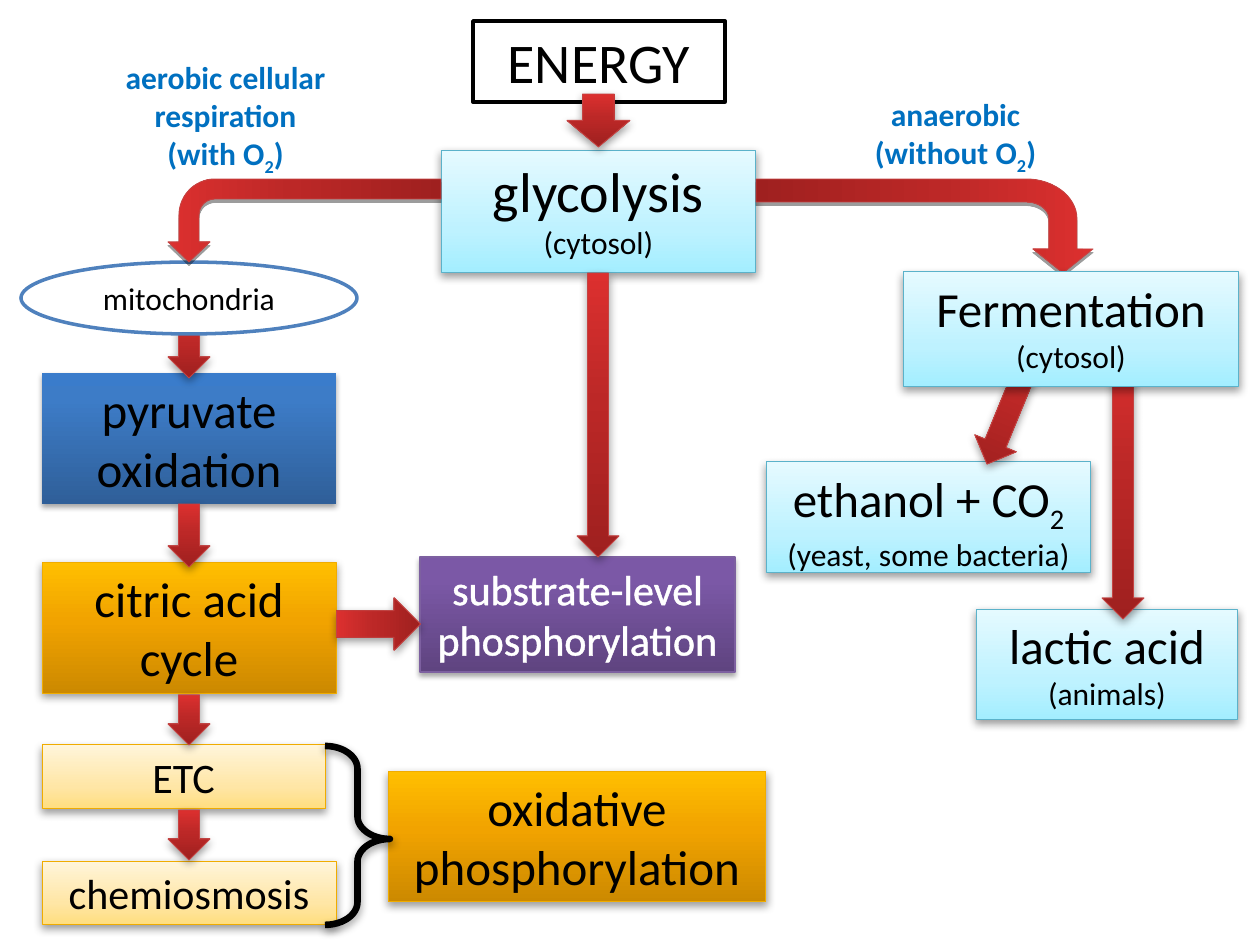
import copy
import math
import pptx
import pptx.util
import pptx.dml.color
import pptx.enum.shapes
import pptx.enum.text
import pptx.oxml
import pptx.oxml.ns

COLORS = {"black": "000000", "white": "FFFFFF", "note": "0070C0", "oval": "4F81BD",
          "sky": "5BB2CA", "gold": "F0AC00", "plum": "7D60A0", "red": "C54342"}
FADES = {
    "blue": [(0, "2F5F99"), (80, "3D7CC7"), (100, "3A7CCB")],
    "sky": [(0, "A3EEFF"), (35, "BEF2FF"), (100, "E5FAFF")],
    "plum": [(0, "5F4480"), (80, "7B58A6"), (100, "7C57A8")],
    "cream": [(0, "FFDE7F"), (35, "FFE6A6"), (100, "FFF5DA")],
    "gold": [(0, "CC8900"), (55, "F1A300"), (100, "FFBF00")],
    "red": [(0, "9F201F"), (55, "BC2827"), (100, "DC302F")],
    "bend": [(0, "DC302F"), (45, "BC2827"), (100, "9F201F")],
}
SOFT = (35, 3.1, 1.8)
DEEP = (38, 5, 2)
FLAT = (38, 0, 2)

TITLE = ("ENERGY", (473, 21, 252, 81))
BACK = [
    ([("pyruvate oxidation", 28)], (42, 373, 294, 131), "blue", None, SOFT),
    ([("glycolysis", 32), ("(cytosol)", 18)], (441, 150, 315, 123), "sky", "sky", DEEP),
    ([("ethanol + CO_2", 28), ("(yeast, some bacteria)", 18)], (766, 462, 325, 111), "sky", "sky", DEEP),
    ([("lactic acid", 28), ("(animals)", 18)], (976, 609, 262, 111), "sky", "sky", DEEP),
    ([("substrate-level phosphorylation", 24)], (420, 557, 315, 115), "plum", "plum", SOFT),
    ([("ETC", 24)], (42, 745, 283, 64), "cream", "gold", DEEP),
    ([("chemiosmosis", 24)], (42, 861, 294, 64), "cream", "gold", DEEP),
    ([("oxidative phosphorylation", 28)], (388, 771, 378, 131), "gold", "gold", DEEP),
    ([("citric acid cycle", 28)], (42, 562, 294, 131), "gold", "gold", DEEP),
]
FRONT = [
    ([("Fermentation", 28), ("(cytosol)", 18)], (903, 272, 336, 115), "sky", "sky", DEEP),
]
NOTES = [
    ([("anaerobic", 18), ("(without O_2_)", 18)], (819, 89, 273, 89)),
    ([("aerobic cellular respiration", 18), ("(with O_2_)", 18)], (84, 52, 283, 127)),
]
OVAL = ([("mitochondria", 18)], (21, 262, 336, 72))
BRACE = (325, 746, 65, 179)
DROPS = [(315, 63), (504, 63), (695, 50), (810, 50)]
ARROWS = [((168, y, 42, h), 0) for y, h in DROPS] + [
    ((567, 94, 63, 53), 0), ((577, 273, 42, 284), 0), ((1102, 346, 42, 273), 0),
    ((989, 340, 45, 129), 22.3), ((352, 582, 53, 84), 270)]
BENDS = [
    dict(hub=441, side=-1, mid=(215, 215), outer=(36, 36), inner=(16, 16), neck=242, half=21, tip=262),
    dict(hub=756, side=1, mid=(1026, 219), outer=(51, 40), inner=(23, 17), neck=249, half=30, tip=273),
]

Kind = pptx.enum.shapes.MSO_SHAPE
qn = pptx.oxml.ns.qn


def px(n):
    return round(n * 914400 / 126)


def rgb(name):
    return pptx.dml.color.RGBColor.from_string(COLORS.get(name, name))


def write(shape, lines, color="black", bold=False, edge=0):
    frame = shape.text_frame
    frame.word_wrap = True
    frame.auto_size = pptx.enum.text.MSO_AUTO_SIZE.NONE
    frame.vertical_anchor = pptx.enum.text.MSO_ANCHOR.TOP
    for i, (text, size) in enumerate(lines):
        para = frame.add_paragraph() if i else frame.paragraphs[0]
        para.alignment = pptx.enum.text.PP_ALIGN.CENTER
        for j, part in enumerate(text.split("_")):
            if not part:
                continue
            run = para.add_run()
            run.text = part
            font = run.font
            font.name, font.size, font.bold = "Calibri", pptx.util.Pt(size), bold
            font.color.rgb = rgb(color)
            props = run._r.get_or_add_rPr()
            if j % 2:
                props.set("baseline", "-25000")
            if edge:
                props.insert(0, pptx.oxml.parse_xml(
                    f'<a:ln {pptx.oxml.ns.nsdecls("a")} w="{pptx.util.Pt(edge)}"><a:solidFill>'
                    f'<a:srgbClr val="{COLORS[color]}"/></a:solidFill></a:ln>'))


def shade(shape, fade, turn=90):
    fill = shape.fill
    fill.gradient()
    fill.gradient_angle = turn
    group = shape._element.spPr.find(".//" + qn("a:gsLst"))
    group.append(copy.deepcopy(group[0]))
    for stop, (place, color) in zip(fill.gradient_stops, FADES[fade]):
        stop.position = place / 100
        stop.color.rgb = rgb(color)


def trim(shape, line=None, width=0.5, cast=None):
    if line:
        shape.line.color.rgb = rgb(line)
        shape.line.width = pptx.util.Pt(width)
    else:
        shape.line.fill.background()
    shape.shadow.inherit = False
    if cast:
        alpha, blur, dist = cast
        shape._element.spPr.find(qn("a:effectLst")).append(pptx.oxml.parse_xml(
            f'<a:outerShdw {pptx.oxml.ns.nsdecls("a")} blurRad="{pptx.util.Pt(blur)}" '
            f'dist="{pptx.util.Pt(dist)}" dir="5400000" rotWithShape="0">'
            f'<a:srgbClr val="000000"><a:alpha val="{alpha * 1000}"/></a:srgbClr></a:outerShdw>'))


def add(kind, spot):
    return slide.shapes.add_shape(kind, *map(px, spot))


def box(lines, spot, fade, line, cast):
    shape = add(Kind.RECTANGLE, spot)
    shade(shape, fade)
    trim(shape, line, 0.75 if line == "plum" else 0.5, cast)
    if fade == "plum":
        write(shape, lines, color="white", edge=1.45)
    else:
        write(shape, lines)


def curve(mid, size, side):
    turns = [math.radians(a) for a in range(0, 91, 6)]
    return [(mid[0] + side * size[0] * math.sin(t), mid[1] - size[1] * math.cos(t)) for t in turns]


def bend(hub, side, mid, outer, inner, neck, half, tip):
    out, back = curve(mid, outer, side), curve(mid, inner, side)[::-1]
    stem = mid[0] + side * (outer[0] + inner[0]) / 2
    head = [(out[-1][0], neck), (stem + side * half, neck), (stem, tip),
            (stem - side * half, neck), (back[0][0], neck)]
    dots = [(hub, out[0][1])] + out + head + back + [(hub, back[-1][1])]
    dots = [(px(x), px(y)) for x, y in dots]
    pen = slide.shapes.build_freeform(*dots[0], scale=1.0)
    pen.add_line_segments(dots[1:], close=True)
    shape = pen.convert_to_shape()
    shade(shape, "bend", 180 if side > 0 else 0)
    trim(shape, "red", cast=FLAT)


deck = pptx.Presentation()
deck.slide_width, deck.slide_height = px(1260), px(945)
slide = deck.slides.add_slide(deck.slide_layouts[5])

text, spot = TITLE
title = slide.shapes.title
title.left, title.top, title.width, title.height = map(px, spot)
title.fill.solid()
title.fill.fore_color.rgb = rgb("white")
trim(title, "black", 2)
write(title, [(text, 32)])

for item in BACK:
    box(*item)
for lines, spot in NOTES:
    write(slide.shapes.add_textbox(*map(px, spot)), lines, color="note", bold=True)
for spot, turn in ARROWS:
    arrow = add(Kind.DOWN_ARROW, spot)
    arrow.rotation = turn
    shade(arrow, "red")
    trim(arrow, "red", cast=DEEP)

brace = add(Kind.RIGHT_BRACE, BRACE)
brace.adjustments[0], brace.adjustments[1] = 0.35, 0.52
brace.fill.background()
trim(brace, "black", 3.78, DEEP)

lines, spot = OVAL
oval = add(Kind.OVAL, spot)
oval.fill.solid()
oval.fill.fore_color.rgb = rgb("white")
trim(oval, "oval", 2)
write(oval, lines)

for item in BENDS:
    bend(**item)
for item in FRONT:
    box(*item)

deck.save("out.pptx")
